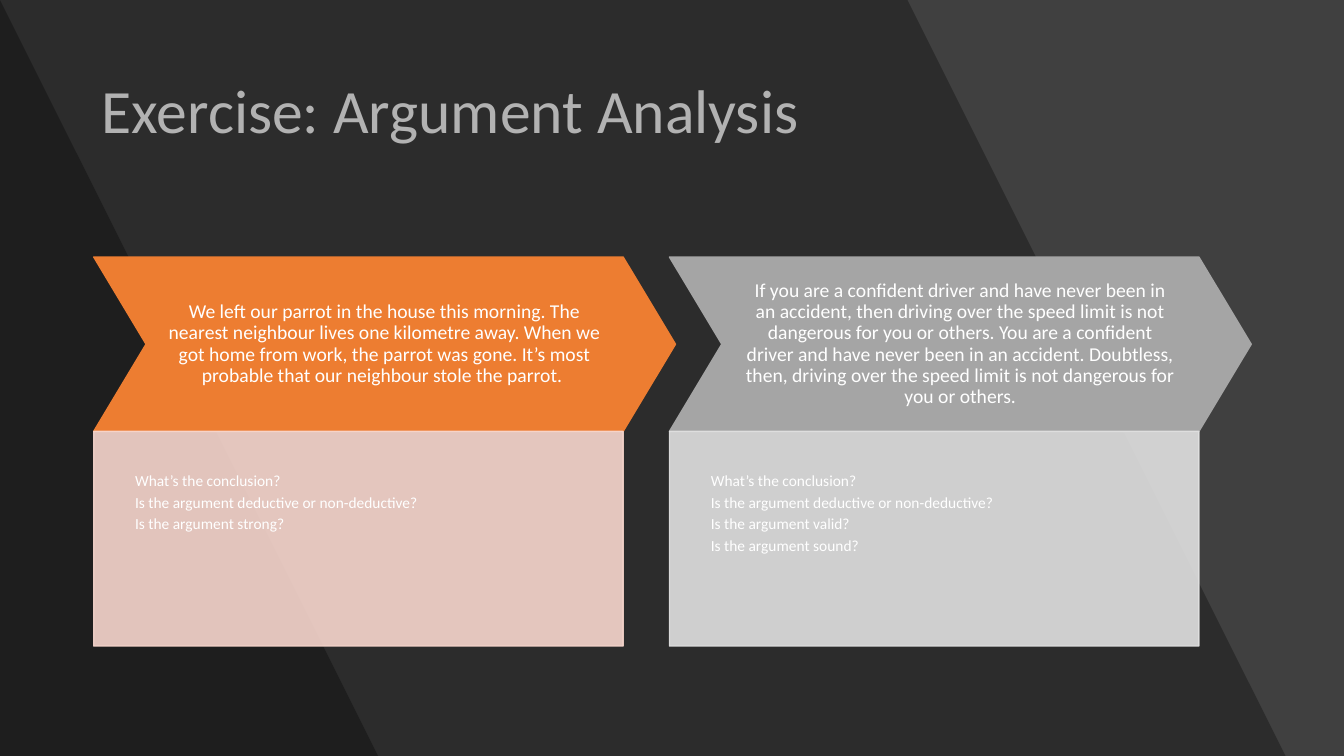
from lxml import etree
from pptx import Presentation
from pptx.dml.color import RGBColor
from pptx.enum.shapes import MSO_SHAPE
from pptx.enum.text import MSO_ANCHOR, MSO_AUTO_SIZE, PP_ALIGN
from pptx.oxml.ns import qn
from pptx.util import Inches, Pt

CHEVRON, RECTANGLE = MSO_SHAPE.CHEVRON, MSO_SHAPE.RECTANGLE
TOP, MIDDLE = MSO_ANCHOR.TOP, MSO_ANCHOR.MIDDLE
LEFT, CENTER = PP_ALIGN.LEFT, PP_ALIGN.CENTER
NO_AUTOFIT = MSO_AUTO_SIZE.NONE

WIDTH, HEIGHT = 13.33, 7.5
WHITE, BLACK, CHARCOAL = "FFFFFF", "000000", "404040"

CONCLUSION = "What’s the conclusion?"
KIND = "Is the argument deductive or non-deductive?"
ARGUMENTS = [
    ("We left our parrot in the house this morning. The nearest neighbour lives "
     "one kilometre away. When we got home from work, the parrot was gone. It’s "
     "most probable that our neighbour stole the parrot. ",
     [CONCLUSION, KIND, "Is the argument strong?"], "ED7D31", "F8D7CE"),
    ("If you are a confident driver and have never been in an accident, then "
     "driving over the speed limit is not dangerous for you or others. You are a "
     "confident driver and have never been in an accident. Doubtless, then, "
     "driving over the speed limit is not dangerous for you or others.",
     [CONCLUSION, KIND, "Is the argument valid?", "Is the argument sound?"],
     "A5A5A5", "E1E1E1"),
]


def rgb(hex_color):
    return RGBColor.from_string(hex_color)


def paint(fill, color, opacity=100):
    fill.solid()
    fill.fore_color.rgb = rgb(color)
    if opacity < 100:
        # The fill's own colour element, reached through its parent's XML
        color_xml = fill._xPr.find(qn("a:solidFill"))[0]
        etree.SubElement(color_xml, qn("a:alpha")).set("val", str(opacity * 1000))


def write(frame, lines, size, font="Calibri", color=WHITE, align=LEFT,
          anchor=TOP, margins=(0.1, 0.05, 0.1, 0.05), after=0.35):
    frame.word_wrap = True
    frame.auto_size = NO_AUTOFIT
    frame.vertical_anchor = anchor
    (frame.margin_left, frame.margin_top,
     frame.margin_right, frame.margin_bottom) = map(Inches, margins)
    for i, line in enumerate(lines):
        paragraph = frame.add_paragraph() if i else frame.paragraphs[0]
        paragraph.alignment = align
        paragraph.line_spacing = 0.9
        paragraph.space_before = Pt(0)
        paragraph.space_after = Pt(size * after)
        run = paragraph.add_run()
        run.text = line
        run.font.name = font
        run.font.size = Pt(size)
        run.font.color.rgb = rgb(color)


class ExerciseSlide:
    def __init__(self, deck):
        self.slide = deck.slides.add_slide(deck.slide_layouts[5])
        self.shapes = self.slide.shapes
        paint(self.slide.background.fill, CHARCOAL)

    def shade(self, top_right, bottom_right):
        builder = self.shapes.build_freeform(0, 0, scale=Inches(1))
        builder.add_line_segments(
            [(top_right, 0), (bottom_right, HEIGHT), (0, HEIGHT)], close=True)
        band = builder.convert_to_shape()
        band.shadow.inherit = False
        paint(band.fill, BLACK, 30)
        band.line.fill.background()

    def title(self, text, left, top, width, height):
        heading = self.shapes.title
        heading.left, heading.top = Inches(left), Inches(top)
        heading.width, heading.height = Inches(width), Inches(height)
        write(heading.text_frame, [text], 44, anchor=MIDDLE, after=0)

    def panel(self, kind, left, top, width, height, color, opacity=100):
        panel = self.shapes.add_shape(
            kind, Inches(left), Inches(top), Inches(width), Inches(height))
        panel.shadow.inherit = False
        paint(panel.fill, color, opacity)
        paint(panel.line.fill, color, opacity)
        panel.line.width = Pt(1)
        return panel

    def argument(self, left, passage, questions, strong, pale):
        top, height, tip = 2.55, 1.73, 0.3
        width = 5.77
        chevron = self.panel(CHEVRON, left, top, width, height, strong)
        chevron.adjustments[0] = tip
        write(chevron.text_frame, [passage], 14, align=CENTER, anchor=MIDDLE,
              margins=(0.21,) * 4)
        box = self.panel(RECTANGLE, left, top + height, width - tip * height,
                         2.13, pale, 90)
        write(box.text_frame, questions, 11, margins=(0.41, 0.41, 0.41, 0.83))


def main():
    deck = Presentation()
    deck.slide_width, deck.slide_height = Inches(WIDTH), Inches(HEIGHT)
    exercise = ExerciseSlide(deck)

    # Slanted background bands
    exercise.shade(9.42, 12.89)
    exercise.shade(0.44, 3.92)

    # Title
    exercise.title("Exercise: Argument Analysis", 0.91, 0.4, 11.51, 1.45)

    # Two arguments, each with its questions below
    for column, argument in enumerate(ARGUMENTS):
        exercise.argument(0.93 + column * 5.71, *argument)

    deck.save("out.pptx")


if __name__ == "__main__":
    main()
